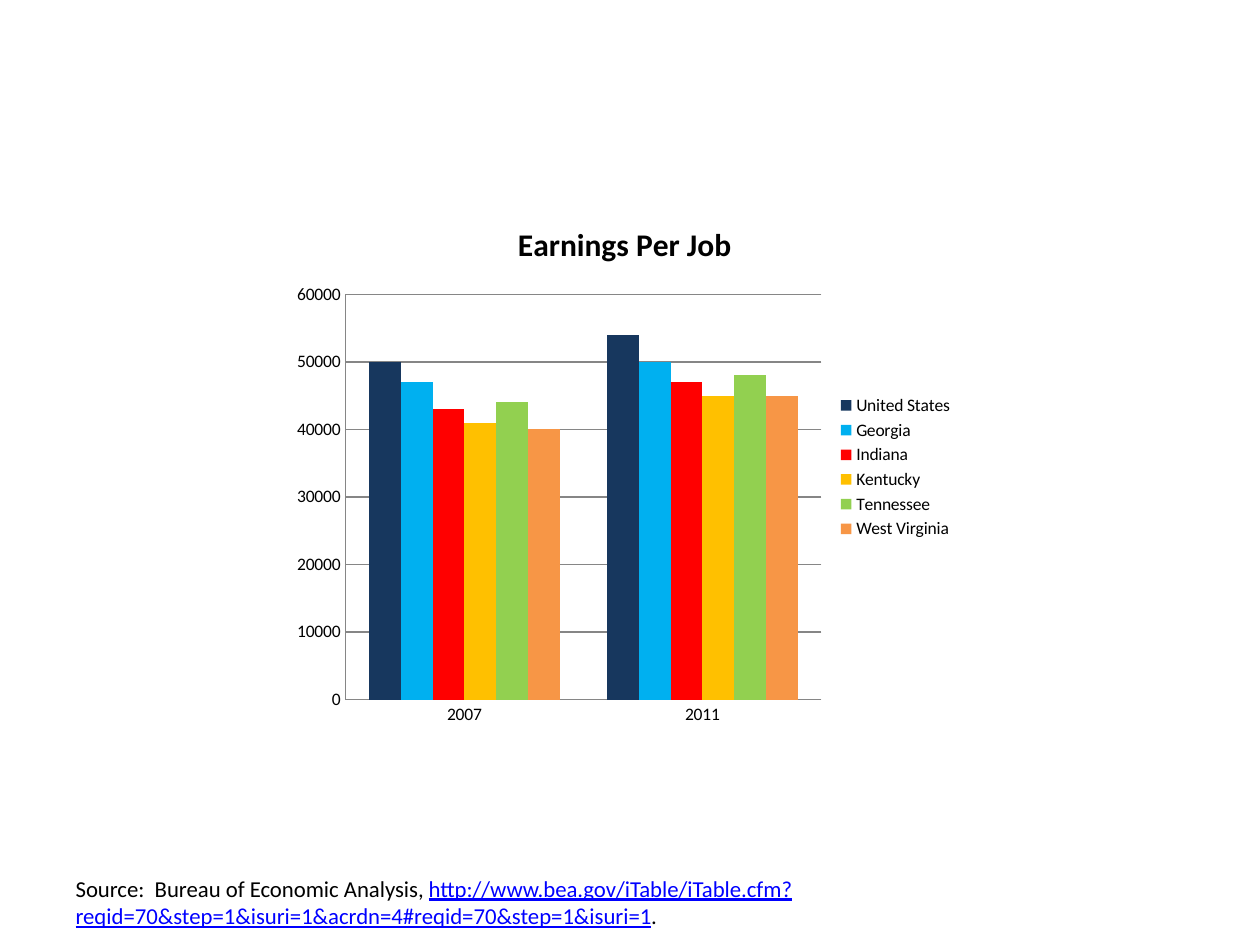
from pptx import Presentation
from pptx.chart.data import CategoryChartData
from pptx.dml.color import RGBColor
from pptx.enum.chart import XL_CHART_TYPE as ChartType
from pptx.enum.chart import XL_LEGEND_POSITION as LegendPosition
from pptx.enum.chart import XL_TICK_MARK as TickMark
from pptx.enum.text import MSO_ANCHOR as Anchor
from pptx.enum.text import MSO_AUTO_SIZE as AutoSize
from pptx.oxml.ns import qn
from pptx.util import Inches, Pt

BLACK = RGBColor(0x00, 0x00, 0x00)
LINK_BLUE = RGBColor(0x00, 0x00, 0xFF)
GRID_GRAY = RGBColor(0x86, 0x86, 0x86)
NAVY = RGBColor(0x17, 0x37, 0x5E)
SKY = RGBColor(0x00, 0xB0, 0xF0)
RED = RGBColor(0xFF, 0x00, 0x00)
GOLD = RGBColor(0xFF, 0xC0, 0x00)
GREEN = RGBColor(0x92, 0xD0, 0x50)
ORANGE = RGBColor(0xF7, 0x96, 0x46)

YEARS = ["2007", "2011"]
EARNINGS = [
    ("United States", (50000, 54000), NAVY),
    ("Georgia", (47000, 50000), SKY),
    ("Indiana", (43000, 47000), RED),
    ("Kentucky", (41000, 45000), GOLD),
    ("Tennessee", (44000, 48000), GREEN),
    ("West Virginia", (40000, 45000), ORANGE),
]
SOURCE_URL = ("http://www.bea.gov/iTable/iTable.cfm?"
              "reqid=70&step=1&isuri=1&acrdn=4#reqid=70&step=1&isuri=1")


class PageBuilder:
    """Holds the style and the current slide; lengths are shares of its size."""

    font_name = "Calibri"

    def __init__(self, deck):
        self.deck = deck
        self.page = deck.slides.add_slide(deck.slide_layouts[1])
        title = self.page.shapes.title
        title.element.getparent().remove(title.element)

    def place(self, left, top, width, height):
        wide, high = self.deck.slide_width, self.deck.slide_height
        return (int(left * wide), int(top * high),
                int(width * wide), int(height * high))

    def style(self, font, size, color=BLACK, bold=False):
        font.name, font.size, font.bold = self.font_name, Pt(size), bold
        font.color.rgb = color

    def body(self, spans, size, *area):
        box = self.page.placeholders[1]
        box.left, box.top, box.width, box.height = self.place(*area)
        frame = box.text_frame
        frame.word_wrap, frame.auto_size = True, AutoSize.NONE
        frame.vertical_anchor = Anchor.TOP
        frame.margin_top = 0
        para = frame.paragraphs[0]
        para.space_before = Pt(0)
        # Plain text without bullet or hanging indent
        props = para._p.get_or_add_pPr()
        props.set("marL", "0")
        props.set("indent", "0")
        props.append(props.makeelement(qn("a:buNone")))
        for text, color, underline in spans:
            span = para.add_run()
            span.text = text
            self.style(span.font, size, color)
            span.font.underline = underline

    def columns(self, title, categories, rows, *area):
        data = CategoryChartData(number_format="0")
        data.categories = categories
        for name, values, _ in rows:
            data.add_series(name, values)
        chart = self.page.shapes.add_chart(
            ChartType.COLUMN_CLUSTERED, *self.place(*area), data).chart
        self.style(chart.font, 10)

        # Title and legend
        chart.has_title = True
        span = chart.chart_title.text_frame.paragraphs[0].add_run()
        span.text = title
        self.style(span.font, 18, bold=True)
        chart.has_legend = True
        chart.legend.position = LegendPosition.RIGHT
        chart.legend.include_in_layout = False

        # Axes and gridlines
        for axis in (chart.category_axis, chart.value_axis):
            axis.major_tick_mark = axis.minor_tick_mark = TickMark.NONE
            axis.format.line.color.rgb = GRID_GRAY
        scale = chart.value_axis
        scale.minimum_scale, scale.maximum_scale = 0, 60000
        scale.major_unit = 10000
        scale.has_major_gridlines = True
        scale.major_gridlines.format.line.color.rgb = GRID_GRAY
        scale.tick_labels.number_format = "0"
        scale.tick_labels.number_format_is_linked = False

        # Columns
        plot = chart.plots[0]
        plot.gap_width, plot.overlap = 150, 0
        plot.vary_by_categories = False
        for series, (_, _, color) in zip(plot.series, rows):
            series.format.fill.solid()
            series.format.fill.fore_color.rgb = color


def main():
    deck = Presentation()
    deck.slide_width, deck.slide_height = Inches(10), Inches(7.5)
    builder = PageBuilder(deck)

    # Source line under the chart
    builder.body([
        ("Source:  Bureau of Economic Analysis, ", BLACK, False),
        (SOURCE_URL, LINK_BLUE, True),
        (".", BLACK, False),
    ], 13, 0.05, 6.94 / 7.5, 0.9, 0.07)

    # Earnings chart
    builder.columns("Earnings Per Job", YEARS, EARNINGS,
                    2.25 / 10, 1.583 / 7.5, 5.417 / 10, 4.25 / 7.5)

    deck.save("out.pptx")


if __name__ == "__main__":
    main()
